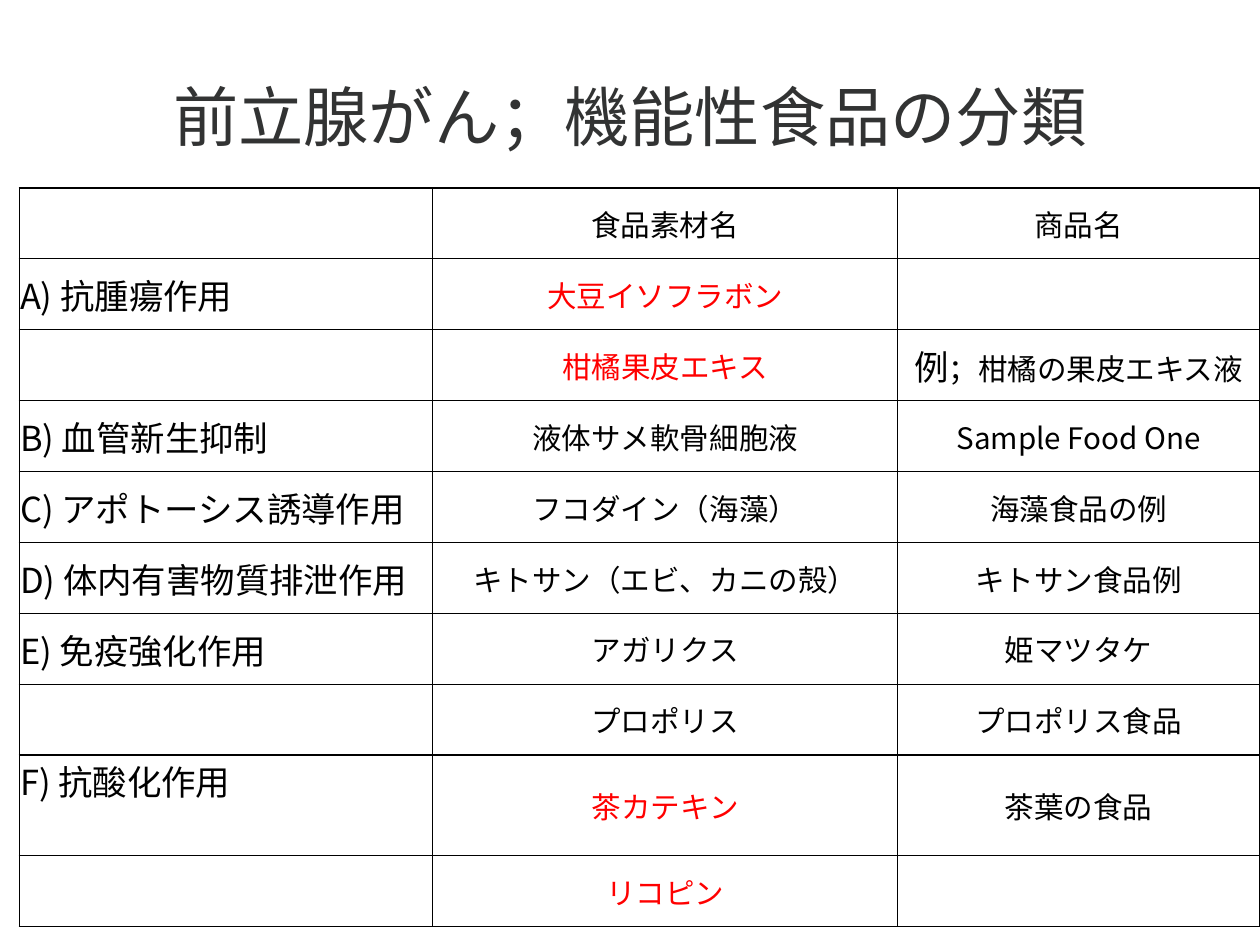
from lxml import etree
from pptx import Presentation
from pptx.dml.color import RGBColor
from pptx.enum.text import MSO_ANCHOR, PP_ALIGN
from pptx.oxml.ns import qn
from pptx.util import Pt

LEFT, CENTER = PP_ALIGN.LEFT, PP_ALIGN.CENTER
TOP, MIDDLE = MSO_ANCHOR.TOP, MSO_ANCHOR.MIDDLE
FONT = "Noto Sans CJK JP"
BLACK, RED, CHARCOAL = "000000", "FF0000", "323333"
LABEL_SIZE, BODY_SIZE, TITLE_SIZE = 28, 24, 53


def write_text(text_frame, runs, color, alignment):
    paragraph = text_frame.paragraphs[0]
    paragraph.alignment = alignment
    for text, size in runs:
        run = paragraph.add_run()
        run.text = text
        run.font.size = Pt(size)
        run.font.name = FONT
        run.font.color.rgb = RGBColor.from_string(color)
        # East Asian letters take their own typeface entry
        etree.SubElement(run.font._element, qn("a:ea"), typeface=FONT)


def add_borders(cell, color, width):
    properties = cell._tc.get_or_add_tcPr()
    for side in ("lnL", "lnR", "lnT", "lnB"):
        line = etree.SubElement(properties, qn(f"a:{side}"), w=str(Pt(width)))
        fill = etree.SubElement(line, qn("a:solidFill"))
        etree.SubElement(fill, qn("a:srgbClr"), val=color)


presentation = Presentation()
presentation.slide_width = Pt(1024)
presentation.slide_height = Pt(768)
slide = presentation.slides.add_slide(presentation.slide_layouts[6])

# Title
title = slide.shapes.add_textbox(Pt(75), Pt(35), Pt(874), Pt(118)).text_frame
title.word_wrap = True
title.vertical_anchor = MIDDLE
title.margin_left = title.margin_right = title.margin_top = title.margin_bottom = 0
write_text(title, [("前立腺がん；機能性食品の分類", TITLE_SIZE)], CHARCOAL, CENTER)

# Table contents: effect, ingredient, ingredient colour, product
food_rows = [
    ("", "食品素材名", BLACK, "商品名"),
    ("A) 抗腫瘍作用", "大豆イソフラボン", RED, ""),
    ("", "柑橘果皮エキス", RED, "例；柑橘の果皮エキス液"),
    ("B) 血管新生抑制", "液体サメ軟骨細胞液", BLACK, "Sample Food One"),
    ("C) アポトーシス誘導作用", "フコダイン（海藻）", BLACK, "海藻食品の例"),
    ("D) 体内有害物質排泄作用", "キトサン（エビ、カニの殻）", BLACK, "キトサン食品例"),
    ("E) 免疫強化作用", "アガリクス", BLACK, "姫マツタケ"),
    ("", "プロポリス", BLACK, "プロポリス食品"),
    ("F) 抗酸化作用", "茶カテキン", RED, "茶葉の食品"),
    ("", "リコピン", RED, ""),
]
column_widths = [336, 378, 294]
ROW_HEIGHT, TALL_ROW_HEIGHT, TALL_ROW = 57.6, 82, 8
table_height = ROW_HEIGHT * (len(food_rows) - 1) + TALL_ROW_HEIGHT

# Table frame
table = slide.shapes.add_table(
    len(food_rows), len(column_widths),
    Pt(15.6), Pt(152.8), Pt(sum(column_widths)), Pt(table_height),
).table
table.first_row = table.horz_banding = False
for column, width in zip(table.columns, column_widths):
    column.width = Pt(width)

# Table cells
for row_index, (effect, ingredient, ingredient_color, product) in enumerate(food_rows):
    is_tall = row_index == TALL_ROW
    table.rows[row_index].height = Pt(TALL_ROW_HEIGHT if is_tall else ROW_HEIGHT)
    prefix, separator, product_name = product.partition("；")
    if separator:
        product_runs = [(prefix, LABEL_SIZE), (separator + product_name, BODY_SIZE)]
    else:
        product_runs = [(product, BODY_SIZE)]
    row_cells = [
        ([(effect, LABEL_SIZE)], BLACK, LEFT, TOP if is_tall else MIDDLE),
        ([(ingredient, BODY_SIZE)], ingredient_color, CENTER, MIDDLE),
        (product_runs, BLACK, CENTER, MIDDLE),
    ]
    for column_index, (runs, color, alignment, anchor) in enumerate(row_cells):
        cell = table.cell(row_index, column_index)
        cell.margin_left = cell.margin_right = cell.margin_top = Pt(0.72)
        cell.margin_bottom = 0
        cell.vertical_anchor = anchor
        add_borders(cell, BLACK, 1)
        cell.fill.background()
        if runs[0][0]:
            write_text(cell.text_frame, runs, color, alignment)

presentation.save("out.pptx")
